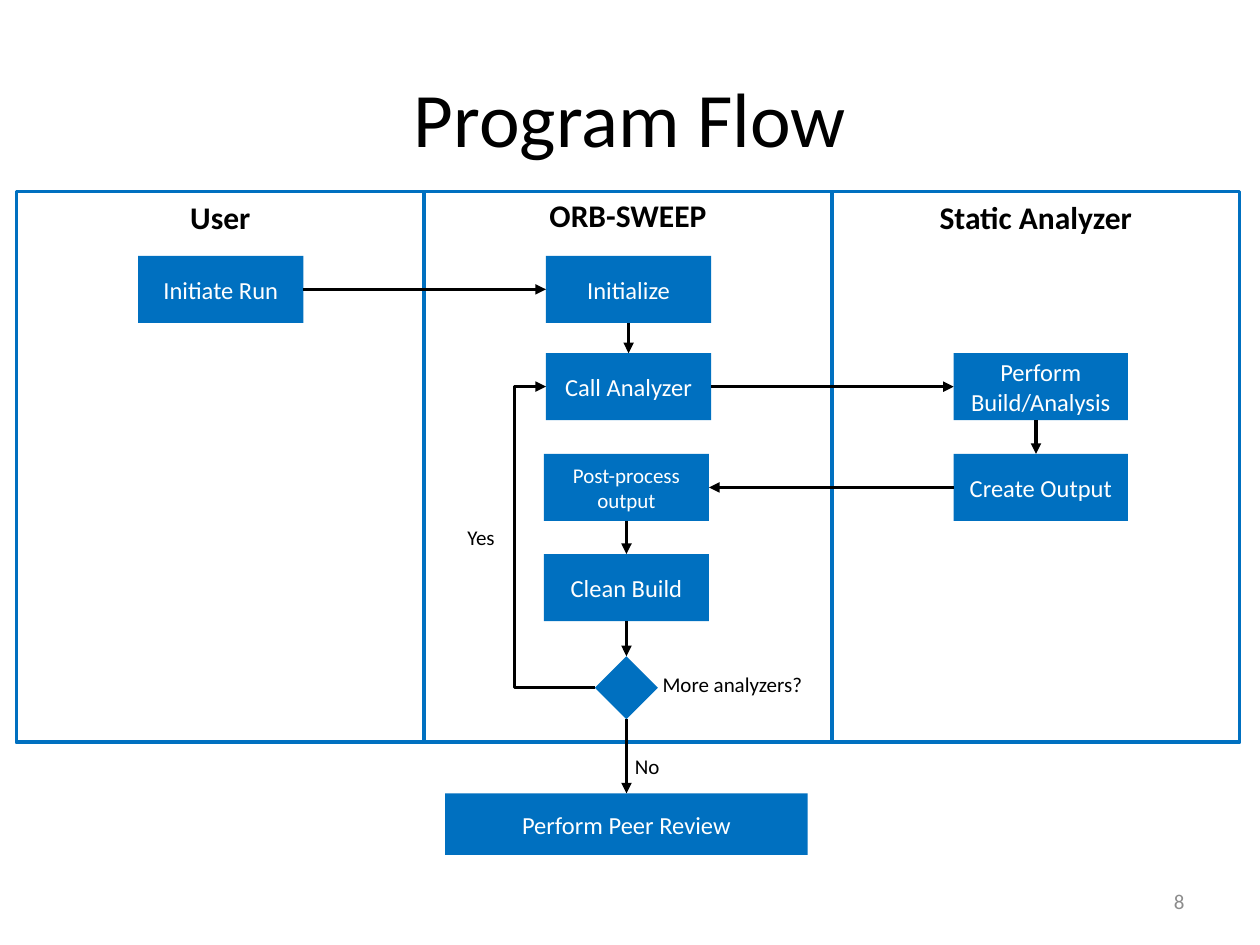
import pptx
import pptx.util
import pptx.dml.color
import pptx.enum.shapes
import pptx.enum.text
from lxml import etree

Pt = pptx.util.Pt
SHAPE = pptx.enum.shapes.MSO_SHAPE
CONNECTOR = pptx.enum.shapes.MSO_CONNECTOR
ALIGN = pptx.enum.text.PP_ALIGN
ANCHOR = pptx.enum.text.MSO_ANCHOR
COLORS = {"blue": "0070C0", "black": "000000", "white": "FFFFFF", "gray": "8C8C8C"}
FONT = "Calibri"
TOP, LEFT, BOTTOM, RIGHT = 0, 1, 2, 3

LANE_LEFT, LANE_TOP, LANE_WIDTH, LANE_HEIGHT = 9.4, 109.6, 233, 314.6
LANES = [("User", 109.6), ("ORB-SWEEP", 108.7), ("Static Analyzer", 109.6)]  # title, title top

ROWS = [146.2, 201.8, 259.4, 316.6]
BOX_WIDTH, WIDE_BOX, BOX_HEIGHT = 94.4, 99.6, 38.3
BOX_INDENT = 69.6
USER, TOOL, ANALYZER = [LANE_LEFT + i * LANE_WIDTH + BOX_INDENT for i in range(3)]
LOOP_CENTER = 358
LOOP_LEFT = LOOP_CENTER - BOX_WIDTH / 2

# name: text, left, top, width, height, font size
BOXES = {
    "initiate": ("Initiate Run", USER, ROWS[0], BOX_WIDTH, BOX_HEIGHT, 14),
    "initialize": ("Initialize", TOOL, ROWS[0], BOX_WIDTH, BOX_HEIGHT, 14),
    "call": ("Call Analyzer", TOOL, ROWS[1], BOX_WIDTH, BOX_HEIGHT, 14),
    "analysis": ("Perform Build/Analysis", ANALYZER, ROWS[1], WIDE_BOX, BOX_HEIGHT, 14),
    "output": ("Create Output", ANALYZER, ROWS[2], WIDE_BOX, BOX_HEIGHT, 14),
    "post": ("Post-process output", LOOP_LEFT, ROWS[2], BOX_WIDTH, BOX_HEIGHT, 12),
    "clean": ("Clean Build", LOOP_LEFT, ROWS[3], BOX_WIDTH, BOX_HEIGHT, 14),
    "review": ("Perform Peer Review", LOOP_CENTER - 103.6, 453.4, 207.2, 35.2, 14),
}
DECISION_TOP, DECISION_SIZE = 375, 36

JOINS = [
    ("initiate", RIGHT, "initialize", LEFT),
    ("initialize", BOTTOM, "call", TOP),
    ("call", RIGHT, "analysis", LEFT),
    ("output", LEFT, "post", RIGHT),
    ("post", BOTTOM, "clean", TOP),
    ("clean", BOTTOM, "decision", TOP),
    ("decision", BOTTOM, "review", TOP),
]
ANALYZER_ARROW_X = 592
LOOP_BEND = 164600  # share of the connector's width, in 1/100000

# text, left, top, width
LABELS = [
    ("More analyzers?", 371.5, 380.2, 106),
    ("No", 355.7, 427, 106),
    ("Yes", 260, 296.4, 65.5),
]


def rgb(name):
    return pptx.dml.color.RGBColor.from_string(COLORS[name])


def write(shape, text, size, color="black", align=ALIGN.CENTER, anchor=ANCHOR.MIDDLE, bold=False):
    frame = shape.text_frame
    frame.word_wrap = True
    frame.vertical_anchor = anchor
    para = frame.paragraphs[0]
    para.text = text
    para.alignment = align
    para.font.name = FONT
    para.font.size = Pt(size)
    para.font.bold = bold
    para.font.color.rgb = rgb(color)


def add_text(page, text, left, top, width, height, size, **style):
    box = page.shapes.add_textbox(Pt(left), Pt(top), Pt(width), Pt(height))
    write(box, text, size, **style)


def add_block(page, left, top, width, height, kind=SHAPE.RECTANGLE):
    block = page.shapes.add_shape(kind, Pt(left), Pt(top), Pt(width), Pt(height))
    block.shadow.inherit = False
    block.fill.solid()
    block.fill.fore_color.rgb = rgb("blue")
    block.line.fill.background()
    return block


def add_lane(page, left):
    lane = page.shapes.add_shape(
        SHAPE.RECTANGLE, Pt(left), Pt(LANE_TOP), Pt(LANE_WIDTH), Pt(LANE_HEIGHT))
    lane.shadow.inherit = False
    lane.fill.background()
    lane.line.color.rgb = rgb("blue")
    lane.line.width = Pt(2)


def add_arrow(page, kind=CONNECTOR.STRAIGHT, x1=0, y1=0, x2=0, y2=0):
    arrow = page.shapes.add_connector(kind, Pt(x1), Pt(y1), Pt(x2), Pt(y2))
    arrow.line.color.rgb = rgb("black")
    arrow.line.width = Pt(2)
    qn = pptx.oxml.ns.qn
    etree.SubElement(arrow.line._get_or_add_ln(), qn("a:tailEnd"), type="triangle")
    etree.SubElement(arrow._element.spPr, qn("a:effectLst"))
    return arrow


def join(arrow, start, start_side, end, end_side):
    arrow.begin_connect(start, start_side)
    arrow.end_connect(end, end_side)


def main():
    deck = pptx.Presentation()
    deck.slide_width, deck.slide_height = Pt(720), Pt(540)
    page = deck.slides.add_slide(deck.slide_layouts[6])

    add_text(page, "Program Flow", 36, 21.6, 648, 90, 44)
    add_text(page, "8", 516, 500.4, 168, 28.8, 12, color="gray", align=ALIGN.RIGHT)

    for i, (title, title_top) in enumerate(LANES):
        left = LANE_LEFT + i * LANE_WIDTH
        add_lane(page, left)
        add_text(page, title, left, title_top, LANE_WIDTH, 29, 18,
                 anchor=ANCHOR.TOP, bold=True)

    nodes = {}
    for name, (text, left, top, width, height, size) in BOXES.items():
        nodes[name] = add_block(page, left, top, width, height)
        write(nodes[name], text, size, color="white")
    nodes["decision"] = add_block(
        page, LOOP_CENTER - DECISION_SIZE / 2, DECISION_TOP,
        DECISION_SIZE, DECISION_SIZE, SHAPE.DIAMOND)

    for start, start_side, end, end_side in JOINS:
        join(add_arrow(page), nodes[start], start_side, nodes[end], end_side)
    add_arrow(page, CONNECTOR.STRAIGHT, ANALYZER_ARROW_X, ROWS[1] + BOX_HEIGHT,
              ANALYZER_ARROW_X, ROWS[2])

    loop = add_arrow(page, CONNECTOR.ELBOW)
    join(loop, nodes["decision"], LEFT, nodes["call"], LEFT)
    guides = loop._element.spPr.prstGeom.get_or_add_avLst()
    etree.SubElement(guides, pptx.oxml.ns.qn("a:gd"), name="adj1", fmla=f"val {LOOP_BEND}")

    for text, left, top, width in LABELS:
        add_text(page, text, left, top, width, 21.8, 12, align=ALIGN.LEFT, anchor=ANCHOR.TOP)

    deck.save("out.pptx")


if __name__ == "__main__":
    main()
